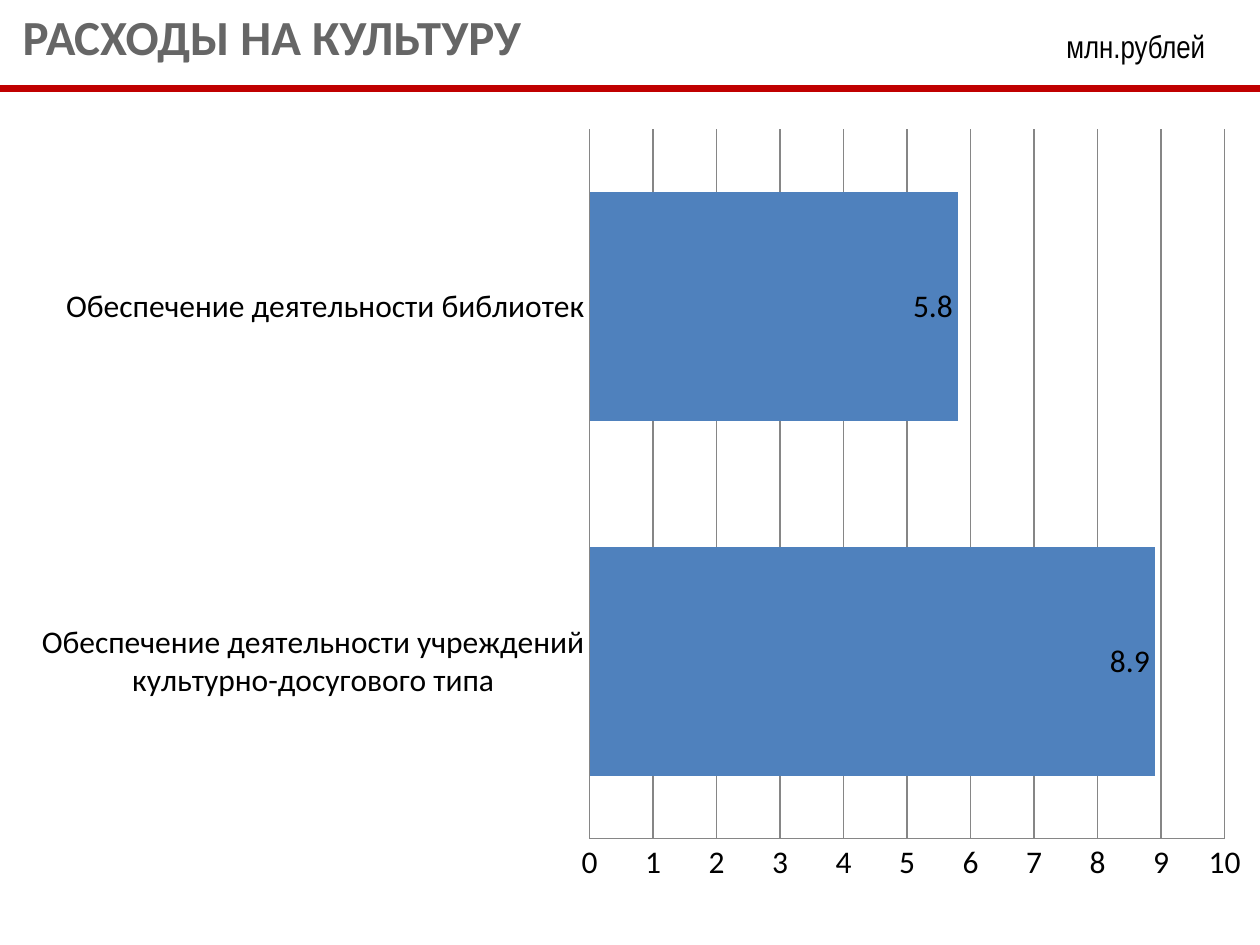
"""Build a slide with a bar chart of spending on culture."""
from lxml import etree
from pptx import Presentation
from pptx.chart.data import CategoryChartData
from pptx.dml.color import RGBColor
from pptx.enum.chart import XL_CHART_TYPE, XL_LABEL_POSITION, XL_TICK_MARK
from pptx.enum.shapes import MSO_CONNECTOR
from pptx.enum.text import MSO_ANCHOR, PP_ALIGN
from pptx.oxml import parse_xml
from pptx.oxml.ns import nsdecls, qn
from pptx.util import Inches, Pt

BAR_STACKED = XL_CHART_TYPE.BAR_STACKED
INSIDE_END = XL_LABEL_POSITION.INSIDE_END
NO_TICK = XL_TICK_MARK.NONE
STRAIGHT = MSO_CONNECTOR.STRAIGHT
TOP, MIDDLE = MSO_ANCHOR.TOP, MSO_ANCHOR.MIDDLE
LEFT, CENTER = PP_ALIGN.LEFT, PP_ALIGN.CENTER

TITLE = "РАСХОДЫ НА КУЛЬТУРУ"
UNIT = "млн.рублей"
SPENDING = [
    ("Обеспечение деятельности учреждений культурно-досугового типа", 8.9),
    ("Обеспечение деятельности библиотек", 5.8),
]
PLOT_SHARES = {"x": 0.468, "y": 0, "w": 0.504, "h": 0.87}

WIDTH, HEIGHT = 10, 7.5
RULE_Y = 0.7
CHART_TOP = 1.02
THEME = {
    "font": "Calibri", "unit_font": "Arial Narrow",
    "title_size": 28, "body_size": 18, "rule_width": 4, "axis_width": 0.75,
    "title": "666666", "text": "000000", "rule": "C00000",
    "bar": "4F81BD", "axis": "868686",
}


def color(role):
    return RGBColor.from_string(THEME[role])


def style_font(font, size="body_size", role="text", face="font", bold=False):
    font.name, font.size, font.bold = THEME[face], Pt(THEME[size]), bold
    font.color.rgb = color(role)


def add_text(slide, text, box, align=LEFT, anchor=TOP, inset=0.1, **font_format):
    frame = slide.shapes.add_textbox(*map(Inches, box)).text_frame
    frame.word_wrap = True
    frame.vertical_anchor = anchor
    frame.margin_left = Inches(inset)
    paragraph = frame.paragraphs[0]
    paragraph.alignment = align
    run = paragraph.add_run()
    run.text = text
    style_font(run.font, **font_format)


def add_rule(slide):
    rule = slide.shapes.add_connector(
        STRAIGHT, 0, Inches(RULE_Y), Inches(WIDTH), Inches(RULE_Y))
    rule.line.color.rgb = color("rule")
    rule.line.width = Pt(THEME["rule_width"])
    etree.SubElement(rule._element.spPr, qn("a:effectLst"))


def style_line(line):
    line.color.rgb = color("axis")
    line.width = Pt(THEME["axis_width"])


def place_plot(chart):
    modes = "".join(f'<c:{side}Mode val="edge"/>' for side in "xy")
    shares = "".join(f'<c:{side} val="{share}"/>' for side, share in PLOT_SHARES.items())
    layout = parse_xml(
        f'<c:layout {nsdecls("c")}><c:manualLayout><c:layoutTarget val="inner"/>'
        f"{modes}{shares}</c:manualLayout></c:layout>")
    plot_area = chart._chartSpace.chart.plotArea
    for automatic in plot_area.findall(qn("c:layout")):
        plot_area.remove(automatic)
    plot_area.insert(0, layout)


def add_spending_chart(slide):
    spending = CategoryChartData(number_format="0.0")
    spending.categories = [name for name, _ in SPENDING]
    spending.add_series(UNIT, [amount for _, amount in SPENDING])
    chart = slide.shapes.add_chart(
        BAR_STACKED, 0, Inches(CHART_TOP), Inches(WIDTH),
        Inches(HEIGHT - CHART_TOP), spending).chart
    chart.has_legend = chart.has_title = False
    style_font(chart.font)
    place_plot(chart)

    for axis in (chart.category_axis, chart.value_axis):
        axis.major_tick_mark = axis.minor_tick_mark = NO_TICK
        style_line(axis.format.line)
    amounts = chart.value_axis
    amounts.minimum_scale, amounts.maximum_scale, amounts.major_unit = 0, 10, 1
    amounts.tick_labels.number_format = "0"
    amounts.tick_labels.number_format_is_linked = False
    style_line(amounts.major_gridlines.format.line)

    plot = chart.plots[0]
    plot.gap_width, plot.overlap, plot.vary_by_categories = 55, 100, False
    bars = plot.series[0]
    bars.format.fill.solid()
    bars.format.fill.fore_color.rgb = color("bar")
    labels = bars.data_labels
    labels.show_value = True
    labels.position = INSIDE_END
    style_font(labels.font)


def main():
    deck = Presentation()
    deck.slide_width, deck.slide_height = Inches(WIDTH), Inches(HEIGHT)
    slide = deck.slides.add_slide(deck.slide_layouts[6])
    add_text(slide, TITLE, (0, 0, WIDTH, 0.57), inset=0.18,
             size="title_size", role="title", bold=True)
    add_rule(slide)
    add_spending_chart(slide)
    add_text(slide, UNIT, (8.15, 0.21, 1.73, 0.31), align=CENTER, anchor=MIDDLE,
             face="unit_font")
    deck.save("out.pptx")


if __name__ == "__main__":
    main()
